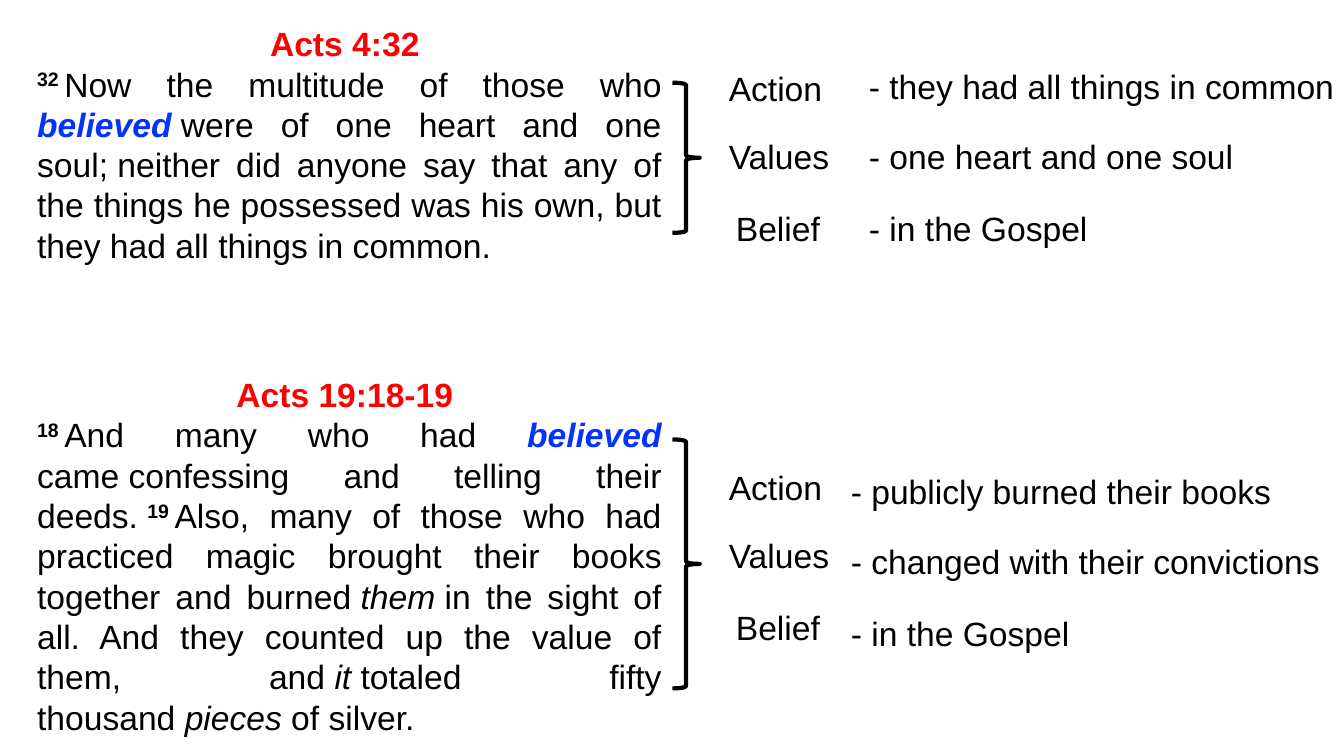
from pptx import Presentation
from pptx.dml.color import RGBColor
from pptx.enum.shapes import MSO_SHAPE
from pptx.enum.text import MSO_AUTO_SIZE, PP_ALIGN
from pptx.util import Inches, Pt

BLACK = RGBColor(0x00, 0x00, 0x00)
RED = RGBColor(0xFF, 0x00, 0x00)
BLUE = RGBColor(0x04, 0x32, 0xFF)

HARD_SPACE_MARK, HARD_SPACE = "~", chr(160)

STYLES = {
    "plain": {"bold": False, "italic": False, "color": BLACK},
    "title": {"bold": True, "italic": False, "color": RED},
    "verse": {"bold": True, "italic": False, "color": BLACK, "baseline": 30000},
    "key": {"bold": True, "italic": True, "color": BLUE},
    "italic": {"bold": False, "italic": True, "color": BLACK},
}

LABELS = [("Action", 7.13, 1.14), ("Values", 7.13, 1.21), ("Belief", 7.2, 1.05)]

PASSAGES = [
    {
        "title": "Acts 4:32~",
        "verses": [
            ("32~", "verse"),
            ("Now the multitude of those who ", "plain"),
            ("believed", "key"),
            ("~were of one heart and one soul;~neither did anyone say that any of "
             "the things he possessed was his own, but they had all things in common.", "plain"),
        ],
        "text": (0.18, 2.52),
        "brace": (0.82, 1.49),
        "label_top": 0.62,
        "finding_at": (8.52, 0.6),
        "findings": [("- they had all things in common", 4.86),
                     ("- one heart and one soul", 3.85),
                     ("- in the Gospel", 2.39)],
    },
    {
        "title": "Acts 19:18-19~",
        "verses": [
            ("18~", "verse"),
            ("And many who had ", "plain"),
            ("believed", "key"),
            (" came~confessing and telling their deeds.~", "plain"),
            ("19~", "verse"),
            ("Also, many of those who had practiced magic brought their books "
             "together and burned~", "plain"),
            ("them", "italic"),
            ("~in the sight of all. And they counted up the value of them, and~", "plain"),
            ("it", "italic"),
            ("~totaled fifty thousand~", "plain"),
            ("pieces", "italic"),
            ("~of silver.", "plain"),
        ],
        "text": (3.66, 3.74),
        "brace": (4.36, 2.47),
        "label_top": 4.58,
        "finding_at": (8.34, 4.62),
        "findings": [("- publicly burned their books", 4.42),
                     ("- changed with their convictions", 4.99),
                     ("- in the Gospel", 2.39)],
    },
]

TEXT_LEFT, TEXT_WIDTH = 0.27, 6.39
BRACE_LEFT, BRACE_WIDTH = 6.67, 0.27
ROW_HEIGHT = 0.5
LABEL_STEPS = (0, 0.68, 1.39)
FINDING_STEPS = (0, 0.7, 1.41)


def add_text(shapes, box, paragraphs, wrap=False):
    tf = shapes.add_textbox(*map(Inches, box)).text_frame
    tf.word_wrap = wrap
    tf.auto_size = MSO_AUTO_SIZE.SHAPE_TO_FIT_TEXT
    for i, (align, runs) in enumerate(paragraphs):
        p = tf.add_paragraph() if i else tf.paragraphs[0]
        p.alignment = align
        for text, style in runs:
            r = p.add_run()
            r.text = text.replace(HARD_SPACE_MARK, HARD_SPACE)
            r.font.name = "Arial"
            r.font.size = Pt(24)
            for name, value in STYLES[style].items():
                if name == "color":
                    r.font.color.rgb = value
                elif name == "baseline":
                    r._r.get_or_add_rPr().set(name, str(value))
                else:
                    setattr(r.font, name, value)


def add_rows(shapes, top, steps, rows):
    for step, (text, left, width) in zip(steps, rows):
        box = (left, top + step, width, ROW_HEIGHT)
        add_text(shapes, box, [(PP_ALIGN.LEFT, [(text, "plain")])])


def add_brace(shapes, top, height):
    sp = shapes.add_shape(MSO_SHAPE.RIGHT_BRACE,
                          *map(Inches, (BRACE_LEFT, top, BRACE_WIDTH, height)))
    sp.shadow.inherit = False
    sp.fill.background()
    sp.line.color.rgb = BLACK
    sp.line.width = Pt(3)


prs = Presentation()
prs.slide_width, prs.slide_height = Inches(13.33), Inches(7.5)
s = prs.slides.add_slide(prs.slide_layouts[6])

for passage in PASSAGES:
    top, height = passage["text"]
    add_text(s.shapes, (TEXT_LEFT, top, TEXT_WIDTH, height),
             [(PP_ALIGN.CENTER, [(passage["title"], "title")]),
              (PP_ALIGN.JUSTIFY, passage["verses"])], wrap=True)

    group = s.shapes.add_group_shape()
    add_brace(group.shapes, *passage["brace"])
    add_rows(group.shapes, passage["label_top"], LABEL_STEPS, LABELS)

    left, top = passage["finding_at"]
    add_rows(s.shapes, top, FINDING_STEPS,
             [(text, left, width) for text, width in passage["findings"]])

prs.save("out.pptx")
